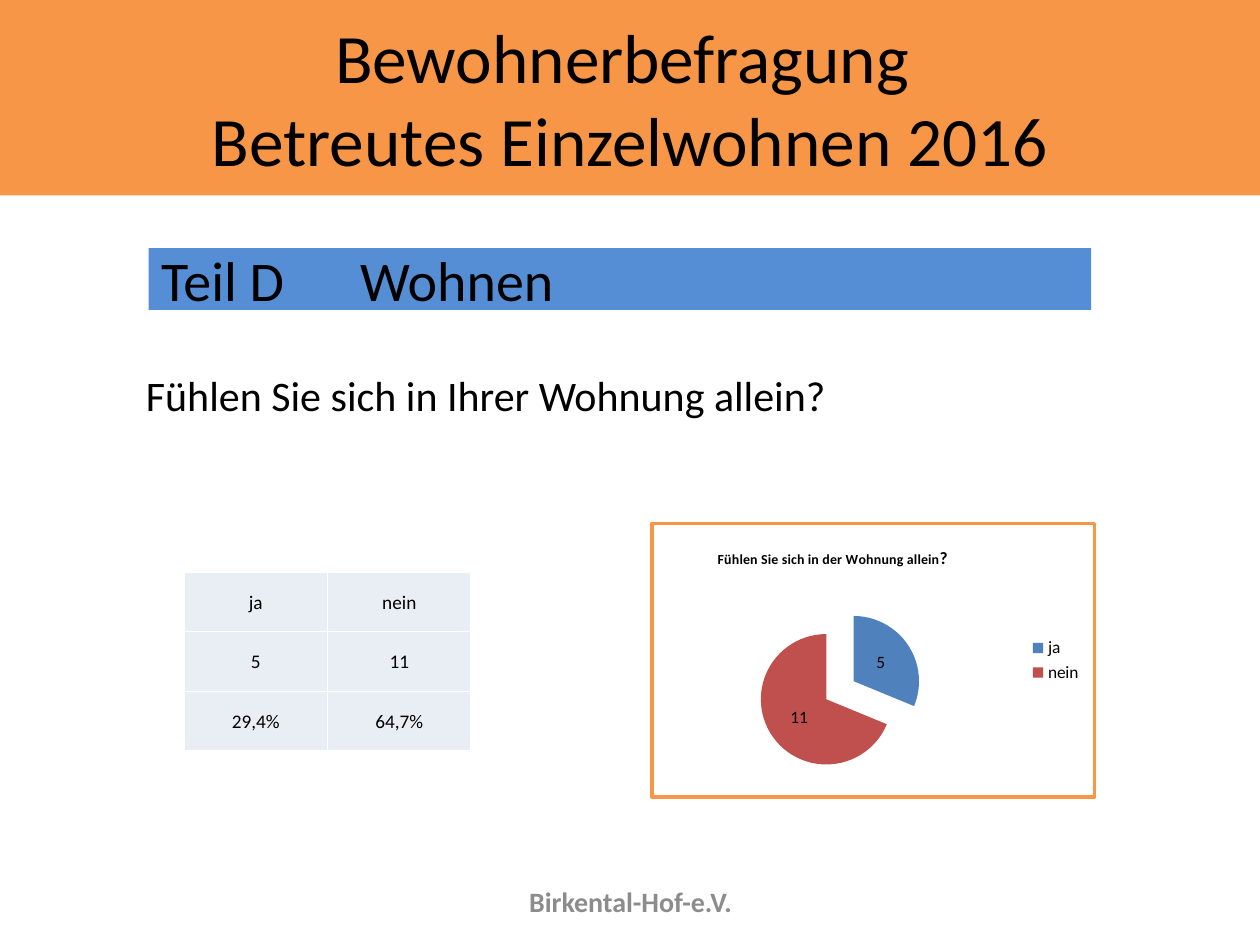
"""Build the survey slide on living alone, with a table and a pie chart."""
import lxml.etree
import pptx
import pptx.chart.data
import pptx.dml.color
import pptx.enum.chart
import pptx.enum.text
import pptx.oxml
import pptx.oxml.ns
import pptx.util

Inches = pptx.util.Inches
Pt = pptx.util.Pt
qn = pptx.oxml.ns.qn
ALIGN = pptx.enum.text.PP_ALIGN
MIDDLE = pptx.enum.text.MSO_ANCHOR.MIDDLE
FONT = "Calibri"
BLACK, WHITE, ORANGE, BLUE = "000000", "FFFFFF", "F79646", "558ED5"
CELL_FILL, GREY = "E9EDF4", "8C8C8C"
ANSWERS = {"ja": (5, "29,4%", "4F81BD"), "nein": (11, "64,7%", "C0504D")}


def paint(fill, color):
    """Give a fill one solid colour."""
    fill.solid()
    fill.fore_color.rgb = pptx.dml.color.RGBColor.from_string(color)


def style_font(font, size, color=BLACK, bold=False):
    """Set the typeface, size, colour and weight of a font."""
    font.name, font.size, font.bold = FONT, Pt(size), bold
    font.color.rgb = pptx.dml.color.RGBColor.from_string(color)


def write(tf, text, size, align=ALIGN.LEFT, color=BLACK, bold=False):
    """Put text in a frame and format its runs."""
    tf.text = text
    for p in tf.paragraphs:
        p.alignment = align
        for r in p.runs:
            style_font(r.font, size, color, bold)


def set_title(s, text):
    """Place the title placeholder as a band across the top."""
    sp = s.shapes.title
    sp.left, sp.top, sp.width, sp.height = 0, 0, Inches(10), Inches(1.55)
    paint(sp.fill, ORANGE)
    tf = sp.text_frame
    tf.auto_size = pptx.enum.text.MSO_AUTO_SIZE.NONE
    tf.vertical_anchor = MIDDLE
    write(tf, text, 39.6, ALIGN.CENTER)


def add_text(s, box, text, size, **style):
    """Add a wrapped, vertically centred text box."""
    sp = s.shapes.add_textbox(*map(Inches, box))
    tf = sp.text_frame
    tf.word_wrap = True
    tf.vertical_anchor = MIDDLE
    write(tf, text, size, **style)
    return sp


def add_banner(s, box, text, tab):
    """Add the section banner, its two parts parted by a tab stop."""
    sp = add_text(s, box, text, 32)
    paint(sp.fill, BLUE)
    pPr = sp.text_frame.paragraphs[0]._p.get_or_add_pPr()
    tabs = lxml.etree.SubElement(pPr, qn("a:tabLst"))
    lxml.etree.SubElement(tabs, qn("a:tab"), pos=str(Inches(tab)), algn="l")


def add_borders(cell, color):
    """Draw a thin line on all four sides of a cell."""
    tcPr = cell._tc.get_or_add_tcPr()
    for i, side in enumerate(("lnL", "lnR", "lnT", "lnB")):
        ln = lxml.etree.Element(qn(f"a:{side}"), w=str(Pt(1)))
        fill = lxml.etree.SubElement(ln, qn("a:solidFill"))
        lxml.etree.SubElement(fill, qn("a:srgbClr"), val=color)
        tcPr.insert(i, ln)


def add_answer_table(s, box):
    """Add the table with one column for each answer."""
    table = s.shapes.add_table(3, len(ANSWERS), *map(Inches, box)).table
    table.first_row = table.horz_banding = False
    for col, (name, (count, share, _)) in enumerate(ANSWERS.items()):
        for row, text in enumerate((name, str(count), share)):
            cell = table.cell(row, col)
            cell.margin_left = cell.margin_right = cell.margin_top = Inches(0.01)
            cell.margin_bottom = 0
            cell.vertical_anchor = MIDDLE
            write(cell.text_frame, text, 11, ALIGN.CENTER)
            paint(cell.fill, CELL_FILL)
            add_borders(cell, WHITE)


def set_layout(parent, index, **values):
    """Give a chart part a manual layout in fractions of the chart."""
    for old in parent.findall(qn("c:layout")):
        parent.remove(old)
    layout = lxml.etree.Element(qn("c:layout"))
    manual = lxml.etree.SubElement(layout, qn("c:manualLayout"))
    for tag, value in values.items():
        lxml.etree.SubElement(manual, qn(f"c:{tag}"), val=str(value))
    parent.insert(index, layout)


def frame_chart(chart):
    """Give the chart area a white fill and an orange border."""
    spPr = pptx.oxml.parse_xml(
        f'<c:spPr {pptx.oxml.ns.nsdecls("c", "a")}>'
        f'<a:solidFill><a:srgbClr val="{WHITE}"/></a:solidFill>'
        f'<a:ln w="{Pt(2)}"><a:solidFill><a:srgbClr val="{ORANGE}"/></a:solidFill></a:ln>'
        "</c:spPr>")
    chart._chartSpace.find(qn("c:chart")).addnext(spPr)


def add_pie(s, box, title):
    """Add the exploded pie chart of the answers."""
    data = pptx.chart.data.CategoryChartData(number_format="#,##0")
    data.categories = list(ANSWERS)
    data.add_series("Series 1", [count for count, _, _ in ANSWERS.values()])
    kind = pptx.enum.chart.XL_CHART_TYPE.PIE
    chart = s.shapes.add_chart(kind, *map(Inches, box), data).chart
    style_font(chart.font, 10)
    frame_chart(chart)

    write(chart.chart_title.text_frame, title, 8, bold=True)
    r = chart.chart_title.text_frame.paragraphs[0].add_run()
    r.text = "?"
    style_font(r.font, 10, bold=True)
    set_layout(chart.chart_title._element, 1, xMode="edge", yMode="edge", x=0.14, y=0.07)

    chart.has_legend = True
    chart.legend.position = pptx.enum.chart.XL_LEGEND_POSITION.RIGHT
    chart.legend.include_in_layout = False
    plot = chart.plots[0]
    set_layout(plot._element.getparent(), 0, layoutTarget="inner", xMode="edge",
               yMode="edge", x=0.24, y=0.3, w=0.37, h=0.62)
    series = plot.series[0]
    for i, (_, _, color) in enumerate(ANSWERS.values()):
        paint(series.points[i].format.fill, color)
    explosion = lxml.etree.Element(qn("c:explosion"), val="25")
    series._element.find(qn("c:dPt")).addprevious(explosion)

    labels = series.data_labels
    labels.show_value = True
    labels.number_format, labels.number_format_is_linked = "#,##0", False
    labels.position = pptx.enum.chart.XL_LABEL_POSITION.CENTER
    style_font(labels.font, 10)


def main():
    """Build the slide and save it."""
    prs = pptx.Presentation()
    prs.slide_width, prs.slide_height = Inches(10), Inches(7.5)
    s = prs.slides.add_slide(prs.slide_layouts[5])
    set_title(s, "Bewohnerbefragung \vBetreutes Einzelwohnen 2016")
    add_banner(s, (1.18, 1.97, 7.48, 0.49), "Teil D\tWohnen", 1.58)
    add_text(s, (1.06, 2.88, 7.8, 0.5), "Fühlen Sie sich in Ihrer Wohnung allein?", 24)
    add_pie(s, (5.16, 4.14, 3.54, 2.2), "Fühlen Sie sich in der Wohnung allein")
    add_answer_table(s, (1.46, 4.54, 2.28, 1.42))
    add_text(s, (3.42, 6.95, 3.17, 0.4), "Birkental-Hof-e.V.", 16,
             align=ALIGN.CENTER, color=GREY, bold=True)
    prs.save("out.pptx")


if __name__ == "__main__":
    main()
